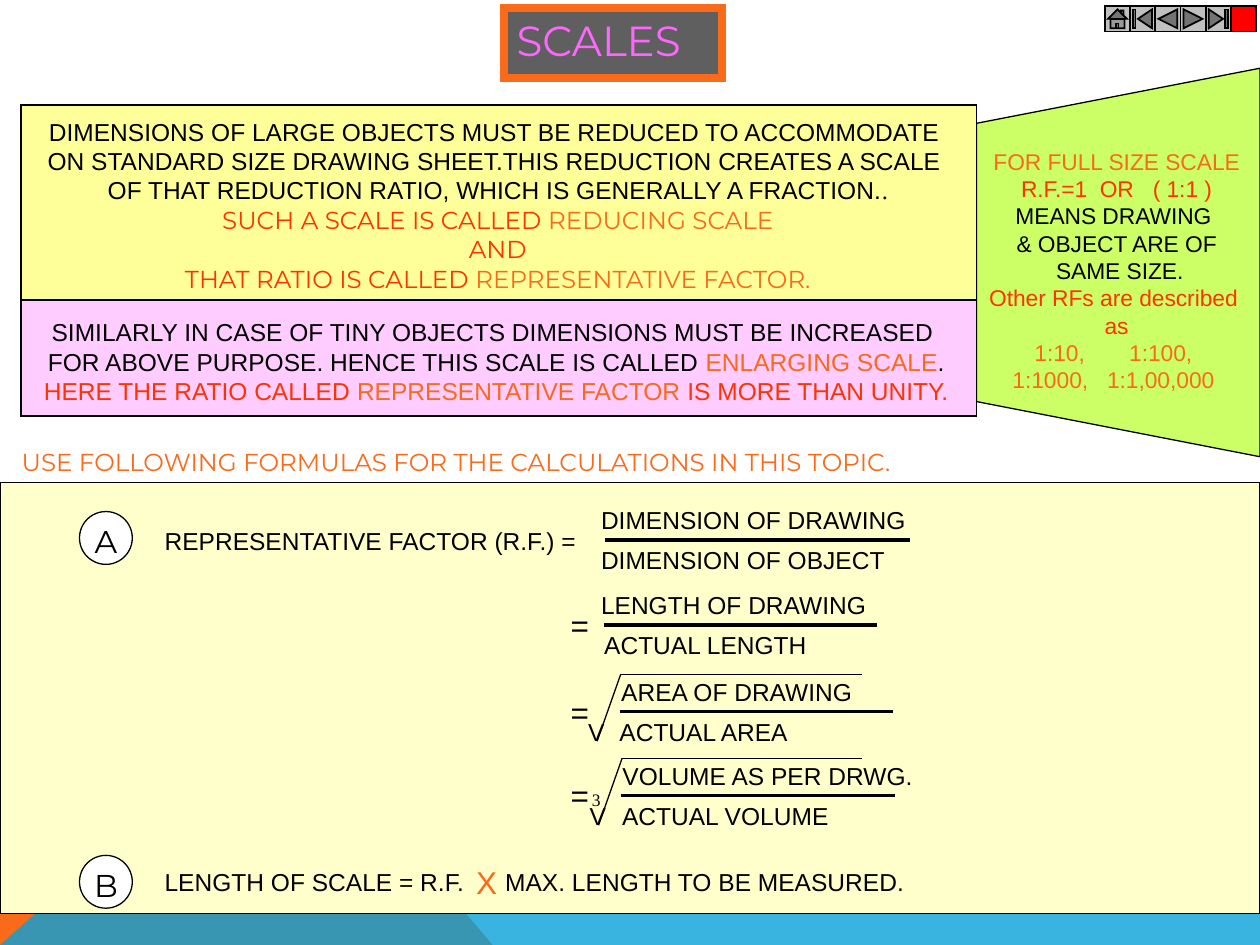
from lxml import etree
from pptx import Presentation
from pptx.dml.color import RGBColor
from pptx.enum.shapes import MSO_CONNECTOR, MSO_SHAPE
from pptx.enum.text import MSO_ANCHOR, PP_ALIGN
from pptx.oxml.ns import qn
from pptx.util import Pt

RECT, OVAL = MSO_SHAPE.RECTANGLE, MSO_SHAPE.OVAL
STRAIGHT = MSO_CONNECTOR.STRAIGHT
TOP, MIDDLE = MSO_ANCHOR.TOP, MSO_ANCHOR.MIDDLE
LEFT, CENTER = PP_ALIGN.LEFT, PP_ALIGN.CENTER
BUTTONS = [MSO_SHAPE.ACTION_BUTTON_HOME, MSO_SHAPE.ACTION_BUTTON_BEGINNING,
           MSO_SHAPE.ACTION_BUTTON_BACK_OR_PREVIOUS,
           MSO_SHAPE.ACTION_BUTTON_FORWARD_OR_NEXT,
           MSO_SHAPE.ACTION_BUTTON_END, MSO_SHAPE.ACTION_BUTTON_CUSTOM]
ARIAL, MONT, TIMES = "Arial", "Montserrat", "Times New Roman"
BLACK, ORANGE, RED = "000000", "F96A1B", "FF3300"


def rgb(value):
    return RGBColor.from_string(value)


def paint(sp, fill, line=None, width=0.75):
    sp.fill.solid()
    sp.fill.fore_color.rgb = rgb(fill)
    if line:
        sp.line.color.rgb = rgb(line)
        sp.line.width = Pt(width)
        ln = sp._element.spPr.find(qn("a:ln"))
        etree.SubElement(ln, qn("a:miter"), lim="800000")
    else:
        sp.line.fill.background()


def gap(width):
    """One space widened by the given number of points."""
    return (" ", BLACK, ARIAL, width)


def write(sp, paragraphs, size, align=LEFT, anchor=TOP, margins=(7.2, 3.6, 7.2)):
    """Each paragraph is a list of runs: text, colour, font, letter spacing."""
    tf = sp.text_frame
    left, top, right = margins
    fmt = {"word_wrap": False, "vertical_anchor": anchor,
           "margin_left": Pt(left), "margin_right": Pt(right),
           "margin_top": Pt(top), "margin_bottom": Pt(0)}
    for name, value in fmt.items():
        setattr(tf, name, value)
    for i, runs in enumerate(paragraphs):
        p = tf.add_paragraph() if i else tf.paragraphs[0]
        p.alignment = align
        p.line_spacing = Pt(size * 1.2)
        for text, color, font, *spacing in runs:
            r = p.add_run()
            r.text = text
            r.font.name, r.font.size = font, Pt(size)
            r.font.color.rgb = rgb(color)
            if spacing:
                r.font._element.set("spc", str(round(spacing[0] * 100)))


def add_box(s, kind, box, fill, width=0.75):
    sp = s.shapes.add_shape(kind, *map(Pt, box))
    sp.shadow.inherit = False
    paint(sp, fill, BLACK, width)
    return sp


def add_outline(s, points, fill, line=None):
    fb = s.shapes.build_freeform(Pt(points[0][0]), Pt(points[0][1]), scale=1.0)
    fb.add_line_segments([(Pt(x), Pt(y)) for x, y in points[1:]], close=True)
    sp = fb.convert_to_shape()
    sp.shadow.inherit = False
    paint(sp, fill, line)
    return sp


def add_label(s, x, y, w, runs, size=14):
    sp = s.shapes.add_textbox(Pt(x), Pt(y), Pt(w), Pt(size * 1.2 + 7.2))
    write(sp, [runs], size)


def add_line(s, x1, y1, x2, y2, width=0.75):
    cx = s.shapes.add_connector(STRAIGHT, Pt(x1), Pt(y1), Pt(x2), Pt(y2))
    cx.line.color.rgb = rgb(BLACK)
    cx.line.width = Pt(width)
    etree.SubElement(cx._element.spPr, qn("a:effectLst"))


def add_footer_band(s, x, y, w, h):
    add_outline(s, [(x, y + h), (x, y), (x + 160.5, y), (x + 281.5, y + h)], ORANGE)
    sp = add_outline(s, [(x, y + h), (x + 160.5, y), (x + w, y), (x + w, y + h)],
                     "08A1D9")
    color = sp._element.spPr.find(qn("a:solidFill"))[0]
    etree.SubElement(color, qn("a:alpha"), val="80000")


def add_title(s, x, y, w, h):
    sp = s.shapes.title
    sp.left, sp.top, sp.width, sp.height = map(Pt, (x, y, w, h))
    paint(sp, "5F5F5F", ORANGE, 4.5)
    write(sp, [[("SCALES", "FF66FF", MONT)]], 24)


def add_full_size_note(s, x, y, w, h):
    sp = add_outline(s, [(x, y + 31.5), (x + w, y), (x + w, y + h), (x, y + h - 31.5)],
                     "CCFF66", BLACK)
    lines = [
        [("FOR FULL SIZE SCALE", ORANGE, ARIAL)],
        [("R.F.=1", RED, ARIAL), gap(3.6), ("OR", RED, ARIAL), gap(7.2),
         ("( 1:1 )", RED, ARIAL)],
        [("MEANS DRAWING ", BLACK, ARIAL)],
        [("& OBJECT ARE OF", BLACK, ARIAL)],
        [(" SAME SIZE.", BLACK, ARIAL)],
        [("Other RFs are described ", RED, ARIAL)],
        [("as", RED, ARIAL)],
        [("1:10,", ORANGE, ARIAL), gap(21.7), ("1:100, ", ORANGE, ARIAL)],
        [("1:1000,", ORANGE, ARIAL), gap(7.2), ("1:1,00,000 ", ORANGE, ARIAL)],
    ]
    write(sp, lines, 13, CENTER, margins=(0, 45.4, 2))


def add_reducing_panel(s, box):
    lines = [
        [("DIMENSIONS OF LARGE OBJECTS MUST BE REDUCED TO ACCOMMODATE ", BLACK, ARIAL)],
        [("ON STANDARD SIZE DRAWING SHEET.THIS REDUCTION CREATES A SCALE ", BLACK, ARIAL)],
        [("OF THAT REDUCTION RATIO, WHICH IS GENERALLY A FRACTION.", BLACK, ARIAL),
         (".", BLACK, TIMES)],
        [("SUCH A SCALE IS CALLED ", RED, MONT), ("REDUCING SCALE", ORANGE, MONT)],
        [(" AND ", RED, MONT)],
        [("THAT RATIO IS CALLED ", RED, MONT), ("REPRESENTATIVE FACTOR.", ORANGE, MONT)],
    ]
    write(add_box(s, RECT, box, "FFFF99"), lines, 14, CENTER, margins=(0, 6.6, 1))


def add_enlarging_panel(s, box):
    lines = [
        [("SIMILARLY IN CASE OF TINY OBJECTS DIMENSIONS MUST BE INCREASED ", BLACK, ARIAL)],
        [("FOR ABOVE PURPOSE. HENCE THIS SCALE IS CALLED ", BLACK, ARIAL),
         ("ENLARGING SCALE", ORANGE, ARIAL), (".", BLACK, ARIAL)],
        [("HERE THE RATIO CALLED ", RED, ARIAL), ("REPRESENTATIVE FACTOR", ORANGE, ARIAL),
         (" IS MORE THAN UNITY.", RED, ARIAL)],
    ]
    write(add_box(s, RECT, box, "FFCCFF"), lines, 14, CENTER, margins=(0, 9.5, 2.8))


def add_badge(s, x, y, letter):
    sp = add_box(s, OVAL, (x, y, 30.2, 30.2), "FFFFFF")
    write(sp, [[(letter, BLACK, MONT)]], 18, CENTER, MIDDLE, (0, 3, 0))


def add_fraction(s, x, y, w, top, bottom, indents):
    """Bar starting at x, y with a term above and below it."""
    for text, dy, indent in zip((top, bottom), (-23.3, -0.5), indents):
        add_label(s, x - indent, y + dy, w + 40, [(text, BLACK, ARIAL)])
    add_line(s, x, y, x + w, y, 2.25)


def add_radical(s, x, y, right):
    """Root sign around the fraction whose bar starts at x, y."""
    add_label(s, x - 25.2, y - 0.4, 24, [("V", BLACK, ARIAL)])
    add_line(s, x - 13, y + 17, x + 0.5, y - 21.3)
    add_line(s, x + 0.5, y - 21.3, right, y - 21.3)


def add_formulas(s, x, y, w, h):
    add_box(s, RECT, (x, y, w, h), "FFFFCC")
    add_badge(s, x + 45.4, y + 16.5, "A")
    add_label(s, x + 87, y + 21.2, 255, [("REPRESENTATIVE FACTOR (R.F.) =", BLACK, ARIAL)])
    rows = [
        (345.6, 32.7, 174.3, "DIMENSION OF DRAWING", "DIMENSION OF OBJECT", (9.2, 9.2)),
        (345, 81.3, 156.2, "LENGTH OF DRAWING", "ACTUAL LENGTH", (8.6, 6.8)),
        (354.2, 130.8, 156.2, "AREA OF DRAWING", "ACTUAL AREA", (6.3, 7.3)),
        (355, 178.8, 156.2, "VOLUME AS PER DRWG.", "ACTUAL VOLUME", (6.4, 6.6)),
    ]
    for i, (dx, dy, length, top, bottom, indents) in enumerate(rows):
        add_fraction(s, x + dx, y + dy, length, top, bottom, indents)
        if i:
            add_label(s, x + 319, y + dy - 14.4, 24, [("=", BLACK, ARIAL)], 18)
        if i > 1:
            add_radical(s, x + dx, y + dy, x + 492.5)
    add_label(s, x + 331.2, y + 171.3, 19.4, [("3", BLACK, TIMES)], 10)

    add_badge(s, x + 45.4, y + 213, "B")
    add_label(s, x + 87, y + 216, 443,
              [("LENGTH OF SCALE = R.F.", BLACK, ARIAL), gap(19.5),
               ("MAX. LENGTH TO BE MEASURED.", BLACK, ARIAL)])
    add_label(s, x + 265, y + 214, 26.6, [("X", ORANGE, ARIAL)], 18)


def add_navigation(s, x, y, size):
    for i, kind in enumerate(BUTTONS):
        fill = "FF0000" if i == len(BUTTONS) - 1 else "C0C0C0"
        add_box(s, kind, (x + i * size, y, size, size), fill, 1)


def main():
    prs = Presentation()
    prs.slide_width, prs.slide_height = Pt(720), Pt(540)
    s = prs.slides.add_slide(prs.slide_layouts[5])
    add_footer_band(s, 0, 397.5, 720, 142.5)
    add_title(s, 288, 4.5, 124.6, 40.3)
    add_full_size_note(s, 558, 39, 162, 222)
    add_reducing_panel(s, (12, 60, 546, 111))
    add_enlarging_panel(s, (12, 171.8, 546, 66))
    add_label(s, 5.3, 252, 559, [("USE FOLLOWING FORMULAS FOR THE CALCULATIONS IN THIS TOPIC.",
                                  ORANGE, MONT)])
    add_formulas(s, 0, 275.8, 720, 246.2)
    add_navigation(s, 631.4, 3.6, 14.4)
    prs.save("out.pptx")


if __name__ == "__main__":
    main()
